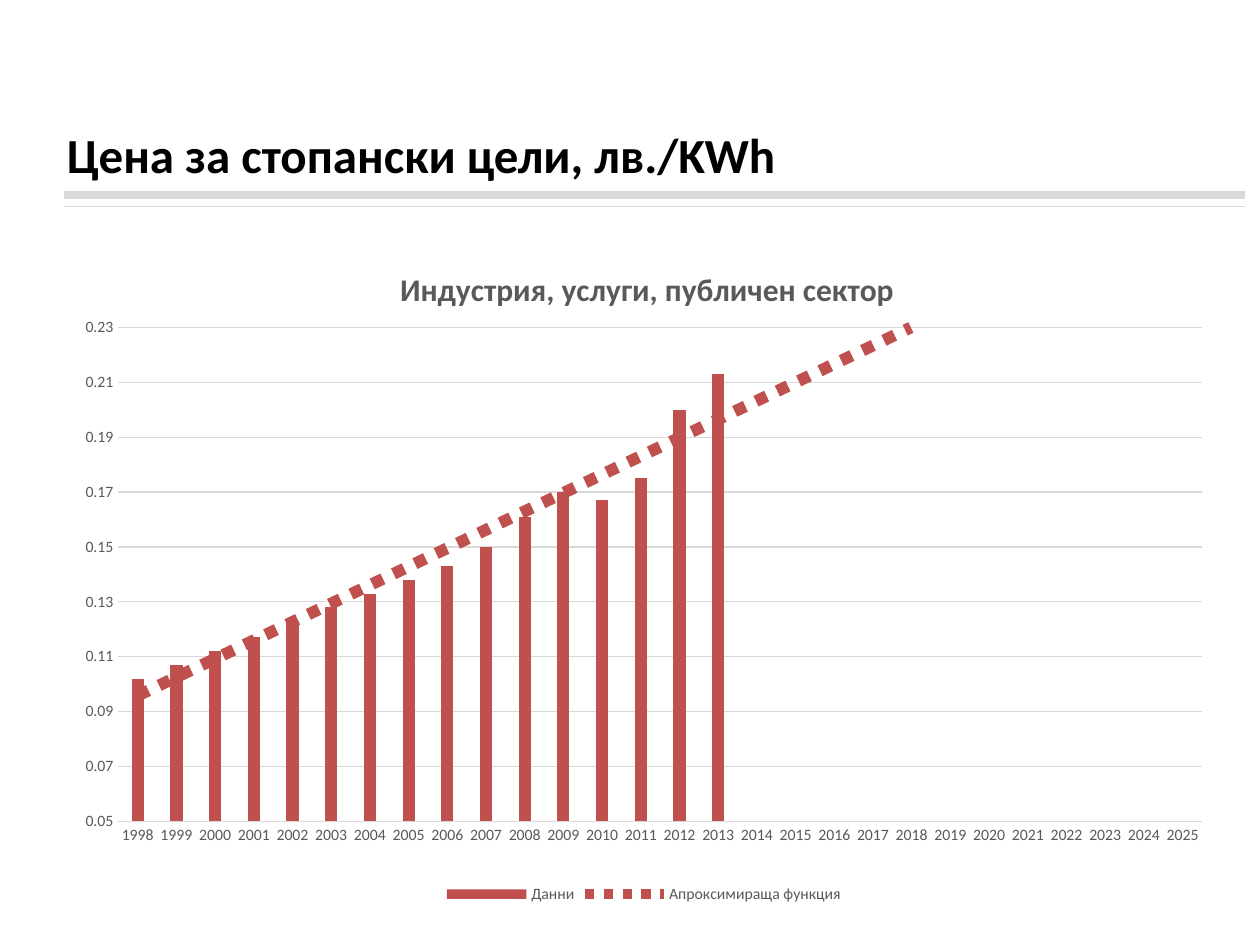
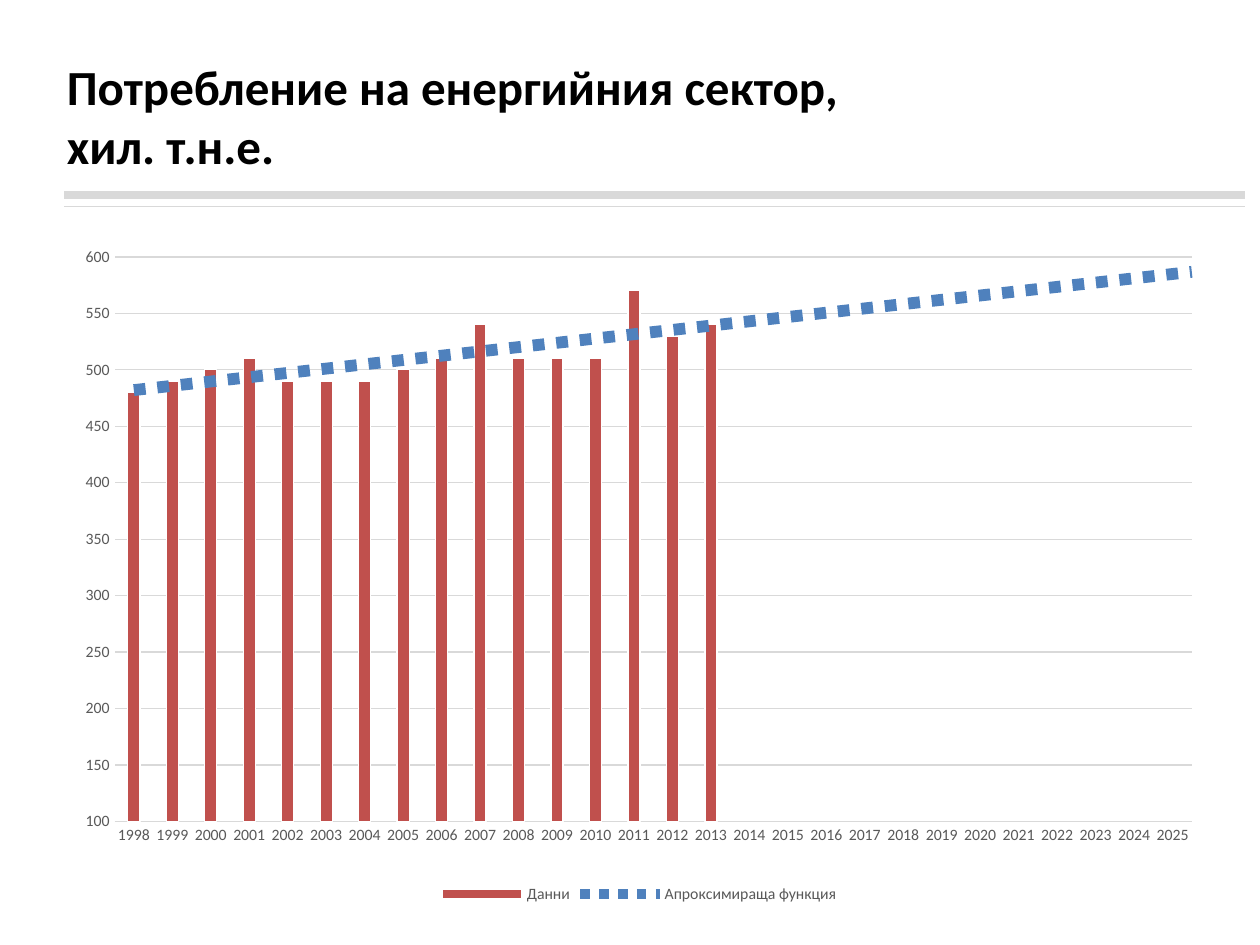
from dataclasses import dataclass

from lxml import etree
from pptx import Presentation
from pptx.chart.data import CategoryChartData
from pptx.dml.color import RGBColor
from pptx.enum.chart import XL_CHART_TYPE as ChartType
from pptx.enum.chart import XL_LEGEND_POSITION as LegendPosition
from pptx.enum.chart import XL_TICK_MARK as TickMark
from pptx.enum.shapes import MSO_CONNECTOR as Connector
from pptx.enum.text import MSO_ANCHOR as Anchor
from pptx.enum.text import PP_ALIGN as Align
from pptx.oxml import parse_xml
from pptx.oxml.ns import nsdecls, qn
from pptx.util import Inches, Pt

YEARS = [str(year) for year in range(1998, 2026)]
DATA_NAME = "Данни"
TREND_NAME = "Апроксимираща функция"
TREND_YEARS_AHEAD = 13

# Boxes are left, top, width, height in inches.
SLIDES = [
    dict(
        title="Цена за стопански цели, лв./KWh",
        title_box=(0.43, 0.6, 6.69, 1.25),
        chart_title="Индустрия, услуги, публичен сектор",
        chart_box=(0.5, 1.86, 9.22, 5.35),
        plot_box=(0.94, 2.6, 8.6, 3.92),
        scale=(0.05, 0.23, 0.02),
        values=[0.102, 0.107, 0.112, 0.117, 0.123, 0.128, 0.133, 0.138,
                0.143, 0.15, 0.161, 0.17, 0.167, 0.175, 0.2, 0.213],
        number_format="0.00",
        trend_color="C0504D",
        outlined=False,
    ),
    dict(
        title="Потребление на енергийния сектор, хил. т.н.е.",
        title_box=(0.43, 0.29, 6.94, 1.25),
        chart_title=None,
        chart_box=(0.5, 1.86, 9.15, 5.35),
        plot_box=(0.91, 2.04, 8.55, 4.48),
        scale=(100, 600, 50),
        values=[480, 490, 500, 510, 490, 490, 490, 500,
                510, 540, 510, 510, 510, 570, 530, 540],
        number_format="0",
        trend_color="4F81BD",
        outlined=True,
    ),
]
CHART_TITLE_SPOT = (3.13, 2.08)
RULES = [(1.55, 4.5), (1.64, 0.25)]  # height on the slide, line width
RULE_ENDS = (0.51, 9.88)


@dataclass(frozen=True)
class Theme:
    font: str = "Calibri"
    ink: str = "000000"
    muted: str = "595959"
    rule: str = "D9D9D9"
    bar: str = "C0504D"
    paper: str = "FFFFFF"
    title_size: float = 28
    chart_title_size: float = 18
    chart_size: float = 10
    label_size: float = 9
    thin: float = 0.75
    trend_width: float = 6.75


THEME = Theme()


def style_font(font, size, color, bold=False):
    font.name = THEME.font
    font.size = Pt(size)
    font.bold = bold
    font.color.rgb = RGBColor.from_string(color)


def style_line(line, color, width):
    line.color.rgb = RGBColor.from_string(color)
    line.width = Pt(width)


def add_rules(slide, layout):
    """Draw the two lines under the title and move them to the layout."""
    start, end = map(Inches, RULE_ENDS)
    for height, width in RULES:
        y = Inches(height)
        rule = slide.shapes.add_connector(Connector.STRAIGHT, start, y, end, y)
        style_line(rule.line, THEME.rule, width)
        etree.SubElement(rule.element.spPr, qn("a:effectLst"))
        layout.shapes.element.append(rule.element)


def set_title(slide, text, box):
    title = slide.shapes.title
    title.left, title.top, title.width, title.height = map(Inches, box)
    frame = title.text_frame
    frame.word_wrap = True
    frame.vertical_anchor = Anchor.MIDDLE
    para = frame.paragraphs[0]
    para.alignment = Align.LEFT
    span = para.add_run()
    span.text = text
    style_font(span.font, THEME.title_size, THEME.ink, bold=True)


def place_in_chart(element, position, chart_box, box, inner=False):
    """Give a chart part a fixed place, from a box in slide inches."""
    for old in element.findall(qn("c:layout")):
        element.remove(old)
    left, top, width, height = chart_box
    fractions = [(box[0] - left) / width, (box[1] - top) / height]
    fractions += [size / whole for size, whole in zip(box[2:], (width, height))]
    target = '<c:layoutTarget val="inner"/>' if inner else ""
    modes = '<c:xMode val="edge"/><c:yMode val="edge"/>'
    sizes = "".join(f'<c:{tag} val="{value:.4f}"/>'
                    for tag, value in zip("xywh", fractions))
    element.insert(position, parse_xml(
        f'<c:layout {nsdecls("c")}><c:manualLayout>{target}{modes}{sizes}'
        "</c:manualLayout></c:layout>"))


def add_trend(chart, color):
    trend = parse_xml(
        f'<c:trendline {nsdecls("c", "a")}><c:name>{TREND_NAME}</c:name>'
        f'<c:spPr><a:ln w="{Pt(THEME.trend_width)}">'
        f'<a:solidFill><a:srgbClr val="{color}"/></a:solidFill>'
        '<a:prstDash val="sysDot"/></a:ln></c:spPr>'
        '<c:trendlineType val="linear"/>'
        f'<c:forward val="{TREND_YEARS_AHEAD}"/>'
        '<c:dispRSqr val="0"/><c:dispEq val="0"/></c:trendline>')
    series = next(chart.element.iter(qn("c:ser")))
    series.find(qn("c:cat")).addprevious(trend)


def style_axes(chart, scale, number_format):
    years, amounts = chart.category_axis, chart.value_axis
    for axis in (years, amounts):
        axis.major_tick_mark = axis.minor_tick_mark = TickMark.NONE
        style_font(axis.tick_labels.font, THEME.label_size, THEME.muted)
    style_line(years.format.line, THEME.rule, THEME.thin)
    years.has_major_gridlines = False
    amounts.format.line.fill.background()
    amounts.minimum_scale, amounts.maximum_scale, amounts.major_unit = scale
    amounts.tick_labels.number_format = number_format
    amounts.tick_labels.number_format_is_linked = False
    style_line(amounts.major_gridlines.format.line, THEME.rule, THEME.thin)


def style_bars(chart, outlined):
    plot = chart.plots[0]
    plot.gap_width, plot.overlap = 219, -27
    plot.vary_by_categories = False
    bars = plot.series[0]
    bars.invert_if_negative = False
    bars.format.fill.solid()
    bars.format.fill.fore_color.rgb = RGBColor.from_string(THEME.bar)
    if outlined:
        style_line(bars.format.line, THEME.paper, THEME.thin)


def set_chart_title(chart, text, chart_box):
    chart.has_title = text is not None
    if text is None:
        return
    span = chart.chart_title.text_frame.paragraphs[0].add_run()
    span.text = text
    style_font(span.font, THEME.chart_title_size, THEME.muted, bold=True)
    title = next(chart.element.iter(qn("c:title")))
    place_in_chart(title, 1, chart_box, CHART_TITLE_SPOT)


def add_trend_chart(slide, content):
    data = CategoryChartData(number_format=content["number_format"])
    data.categories = YEARS
    data.add_series(DATA_NAME, content["values"])
    box = content["chart_box"]
    chart = slide.shapes.add_chart(
        ChartType.COLUMN_CLUSTERED, *map(Inches, box), data).chart
    style_font(chart.font, THEME.chart_size, THEME.ink)
    set_chart_title(chart, content["chart_title"], box)
    style_axes(chart, content["scale"], content["number_format"])
    style_bars(chart, content["outlined"])
    add_trend(chart, content["trend_color"])
    chart.has_legend = True
    chart.legend.position = LegendPosition.BOTTOM
    chart.legend.include_in_layout = False
    style_font(chart.legend.font, THEME.label_size, THEME.muted)
    plot_area = next(chart.element.iter(qn("c:plotArea")))
    place_in_chart(plot_area, 0, box, content["plot_box"], inner=True)


def main():
    deck = Presentation()
    deck.slide_width, deck.slide_height = Inches(10), Inches(7.5)
    layout = deck.slide_layouts.get_by_name("Title Only")
    for number, content in enumerate(SLIDES):
        slide = deck.slides.add_slide(layout)
        if number == 0:
            add_rules(slide, layout)
        set_title(slide, content["title"], content["title_box"])
        add_trend_chart(slide, content)
    deck.save("out.pptx")


if __name__ == "__main__":
    main()
